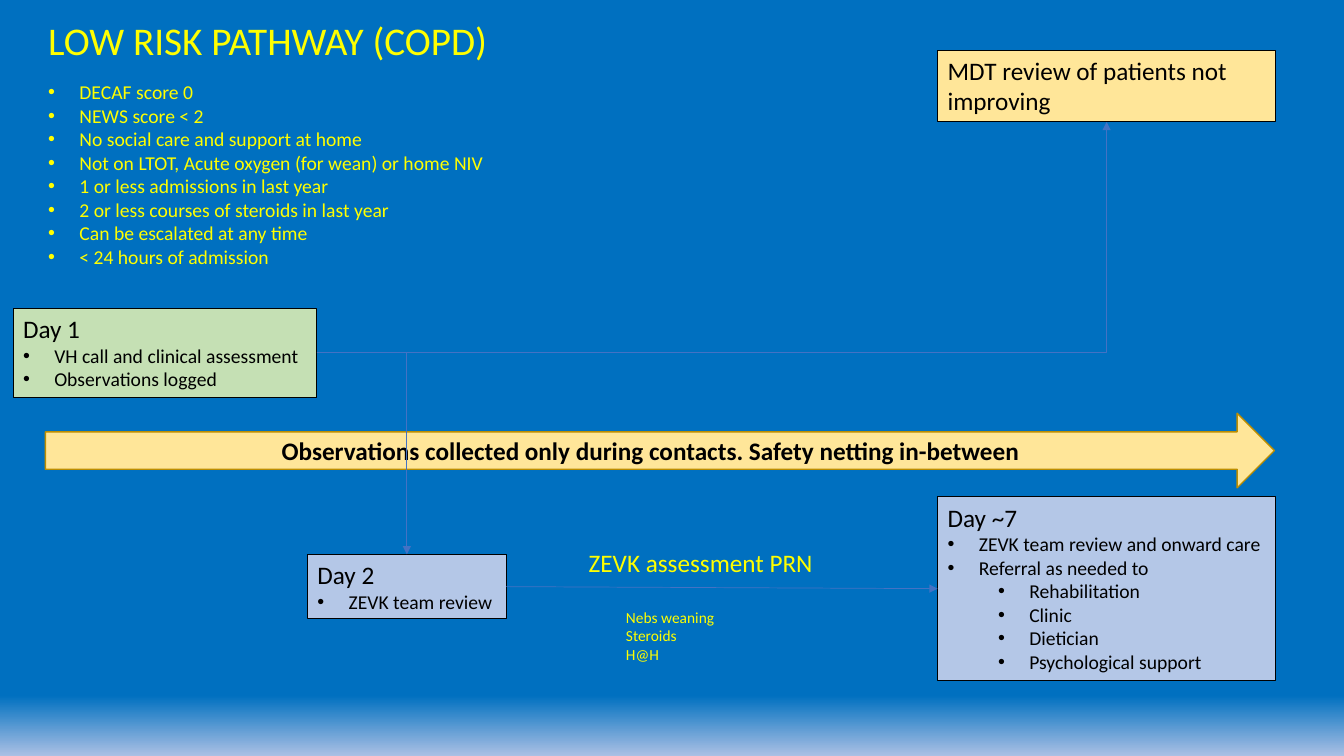
import dataclasses
import typing

import lxml.etree
import pptx
import pptx.dml.color
import pptx.enum.shapes
import pptx.enum.text
import pptx.oxml.ns
import pptx.util

Inches = pptx.util.Inches
Pt = pptx.util.Pt
Shape = pptx.enum.shapes.MSO_SHAPE
Joint = pptx.enum.shapes.MSO_CONNECTOR
Anchor = pptx.enum.text.MSO_ANCHOR
Align = pptx.enum.text.PP_ALIGN
AutoSize = pptx.enum.text.MSO_AUTO_SIZE
qn = pptx.oxml.ns.qn

TOP, LEFT, BOTTOM, RIGHT = range(4)
YELLOW, BLACK, SAND, PERIWINKLE = "FFFF00", "000000", "FFE699", "B4C7E7"
BULLET_HANG = 0.31
BULLET_INDENTS = (0.31, 0.81)


@dataclasses.dataclass(frozen=True)
class Line:
    text: str
    size: float = 18
    level: typing.Optional[int] = None
    space_before: float = 0
    bold: bool = False


@dataclasses.dataclass(frozen=True)
class Panel:
    place: tuple[float, float, float, float]
    lines: list[Line]
    color: str = BLACK
    fill: typing.Optional[str] = None
    border: tuple[str, float] = (BLACK, 0.75)
    outline: Shape = Shape.RECTANGLE
    wrap: bool = False
    grow: bool = True
    align: Align = Align.LEFT
    anchor: Anchor = Anchor.TOP


@dataclasses.dataclass(frozen=True)
class Route:
    start: str
    start_side: int
    end: str
    end_side: int
    bent: bool = True


def rgb(color: str) -> pptx.dml.color.RGBColor:
    return pptx.dml.color.RGBColor.from_string(color)


def bullets(*texts: str, level: int = 0) -> list[Line]:
    return [Line(text, 14, level) for text in texts]


def apply_format(target: typing.Any, values: dict[str, typing.Any]) -> None:
    for name, value in values.items():
        setattr(target, name, value)


def write_line(paragraph: typing.Any, line: Line, panel: Panel) -> None:
    apply_format(paragraph, {"alignment": panel.align, "space_before": Pt(line.space_before)})
    if line.level is not None:
        paragraph.level = line.level
        properties = paragraph._p.get_or_add_pPr()
        properties.set("marL", str(Inches(BULLET_INDENTS[line.level])))
        properties.set("indent", str(-Inches(BULLET_HANG)))
        lxml.etree.SubElement(properties, qn("a:buFont")).set("typeface", "Arial")
        lxml.etree.SubElement(properties, qn("a:buChar")).set("char", "•")
    run = paragraph.add_run()
    run.text = line.text
    apply_format(run.font, {"name": "Calibri", "size": Pt(line.size), "bold": line.bold})
    run.font.color.rgb = rgb(panel.color)


def draw_panel(slide: typing.Any, panel: Panel) -> typing.Any:
    place = [Inches(length) for length in panel.place]
    if panel.fill is None:
        box = slide.shapes.add_textbox(*place)
    else:
        box = slide.shapes.add_shape(panel.outline, *place)
        box.shadow.inherit = False
        box.fill.solid()
        box.fill.fore_color.rgb = rgb(panel.fill)
        border_color, border_width = panel.border
        box.line.color.rgb = rgb(border_color)
        box.line.width = Pt(border_width)
    frame = box.text_frame
    apply_format(frame, {
        "word_wrap": panel.wrap,
        "auto_size": AutoSize.SHAPE_TO_FIT_TEXT if panel.grow else AutoSize.NONE,
        "vertical_anchor": panel.anchor,
    })
    for index, line in enumerate(panel.lines):
        paragraph = frame.add_paragraph() if index else frame.paragraphs[0]
        write_line(paragraph, line, panel)
    return box


def draw_route(slide: typing.Any, route: Route, steps: dict[str, typing.Any]) -> None:
    joint = Joint.ELBOW if route.bent else Joint.STRAIGHT
    arrow = slide.shapes.add_connector(joint, 0, 0, 0, 0)
    arrow.begin_connect(steps[route.start], route.start_side)
    arrow.end_connect(steps[route.end], route.end_side)
    arrow.line.color.rgb = rgb("4472C4")
    arrow.line.width = Pt(0.5)
    properties = arrow._element.spPr
    if route.bent:
        properties.find(qn("a:prstGeom")).set("prst", "bentConnector2")
    stroke = properties.find(qn("a:ln"))
    lxml.etree.SubElement(stroke, qn("a:tailEnd")).set("type", "triangle")
    lxml.etree.SubElement(properties, qn("a:effectLst"))


def paint_background(slide: typing.Any) -> None:
    fill = slide.background.fill
    fill.gradient()
    fill.gradient_angle = 270
    for stop, (position, color) in zip(fill.gradient_stops, ((0.92, "0070C0"), (1, "ABC0E4"))):
        stop.position = position
        stop.color.rgb = rgb(color)


PANELS = {
    "criteria": Panel(
        (0.38, 0.11, 5.2, 2.63),
        [Line("LOW RISK PATHWAY (COPD)", 28), Line("DECAF score 0", 14, 0, space_before=12.2)]
        + bullets(
            "NEWS score < 2",
            "No social care and support at home",
            "Not on LTOT, Acute oxygen (for wean) or home NIV",
            "1 or less admissions in last year",
            "2 or less courses of steroids in last year",
            "Can be escalated at any time",
            "< 24 hours of admission",
        ),
        color=YELLOW, wrap=True,
    ),
    "day 1": Panel(
        (0.13, 3.06, 3.01, 0.88),
        [Line("Day 1")] + bullets("VH call and clinical assessment", "Observations logged"),
        fill="C5E0B4",
    ),
    "day 2": Panel(
        (3.05, 5.5, 1.97, 0.64), [Line("Day 2")] + bullets("ZEVK team review"), fill=PERIWINKLE,
    ),
    "day 7": Panel(
        (9.3, 4.93, 3.35, 1.82),
        [Line("Day ~7")]
        + bullets("ZEVK team review and onward care", "Referral as needed to")
        + bullets("Rehabilitation", "Clinic", "Dietician", "Psychological support", level=1),
        fill=PERIWINKLE,
    ),
    "observations": Panel(
        (0.45, 4.1, 12.19, 0.74),
        [Line("Observations collected only during contacts. Safety netting in-between", bold=True)],
        fill=SAND, border=("BD8E00", 1), outline=Shape.RIGHT_ARROW,
        wrap=True, grow=False, align=Align.CENTER, anchor=Anchor.MIDDLE,
    ),
    "mdt review": Panel(
        (9.3, 0.5, 3.35, 0.71), [Line("MDT review of patients not improving")],
        fill=SAND, wrap=True,
    ),
    "assessment": Panel((5.74, 5.38, 2.46, 0.4), [Line("ZEVK assessment PRN")], color=YELLOW),
    "treatments": Panel(
        (6.11, 5.98, 1.12, 0.66),
        [Line(text, 11) for text in ("Nebs weaning", "Steroids", "H@H")],
        color=YELLOW,
    ),
}

ROUTES = [
    Route("day 1", RIGHT, "day 2", TOP),
    Route("day 1", RIGHT, "mdt review", BOTTOM),
    Route("day 2", RIGHT, "day 7", LEFT, bent=False),
]


def main() -> None:
    deck = pptx.Presentation()
    apply_format(deck, {"slide_width": Inches(13.33), "slide_height": Inches(7.5)})
    slide = deck.slides.add_slide(deck.slide_layouts[6])
    paint_background(slide)
    steps = {name: draw_panel(slide, panel) for name, panel in PANELS.items()}
    for route in ROUTES:
        draw_route(slide, route, steps)
    deck.save("out.pptx")


if __name__ == "__main__":
    main()
